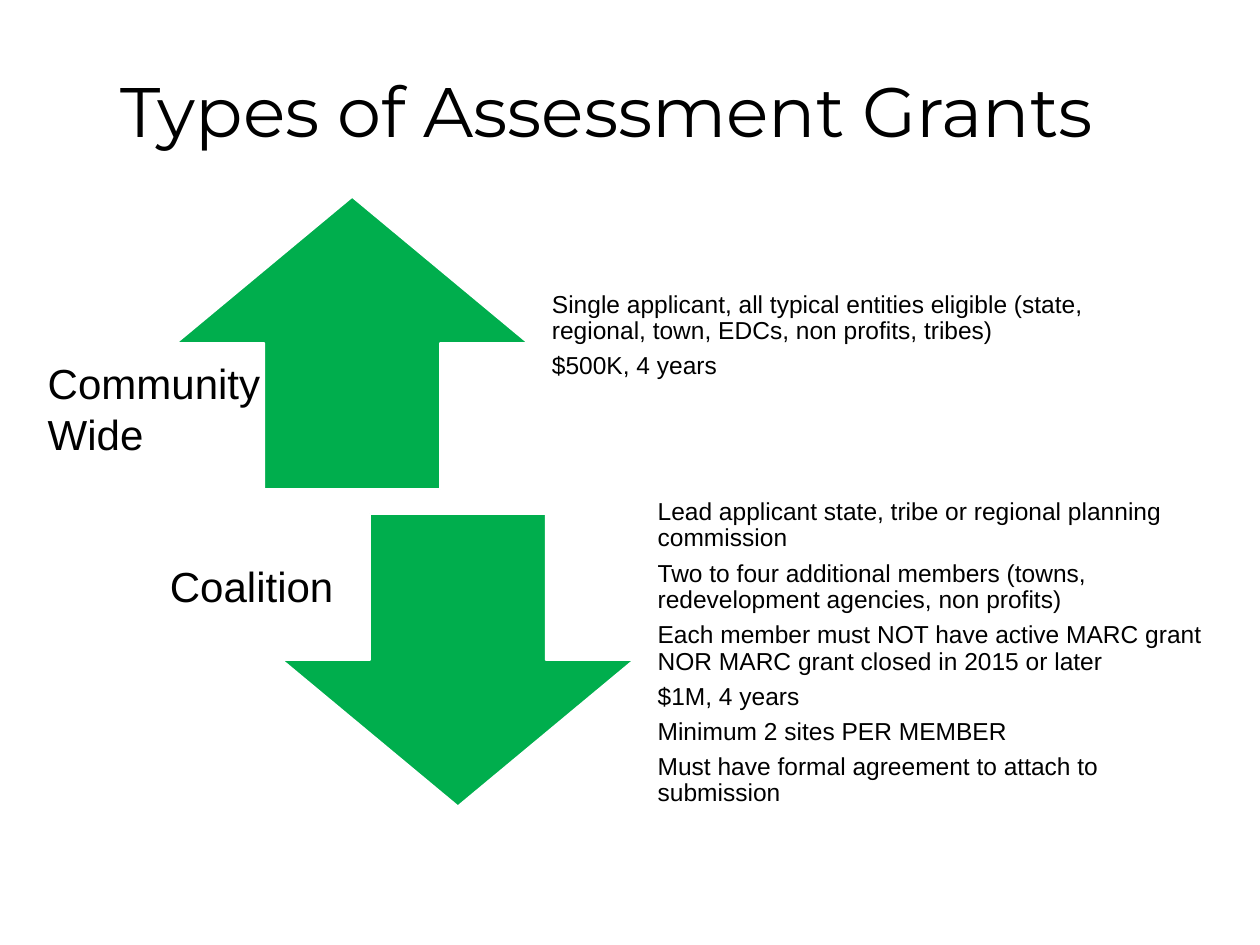
from pptx import Presentation
from pptx.dml.color import RGBColor
from pptx.enum.shapes import MSO_SHAPE as SHAPE
from pptx.enum.text import MSO_ANCHOR as ANCHOR, MSO_AUTO_SIZE as AUTO, PP_ALIGN as ALIGN
from pptx.util import Pt

GREEN = RGBColor(0x00, 0xAE, 0x4D)
WHITE = RGBColor(0xFF, 0xFF, 0xFF)
BLACK = RGBColor(0x00, 0x00, 0x00)


def set_font(p, name, size):
    p.font.name, p.font.size = name, Pt(size)
    p.font.color.rgb = BLACK


prs = Presentation()
prs.slide_width, prs.slide_height = Pt(720), Pt(540)
s = prs.slides.add_slide(prs.slide_layouts[5])

# Title
title = s.shapes.title
title.left, title.top, title.width, title.height = Pt(10.8), Pt(13.7), Pt(671.8), Pt(104.4)
tf = title.text_frame
tf.text = "Types of Assessment Grants"
tf.vertical_anchor = ANCHOR.MIDDLE
p = tf.paragraphs[0]
p.alignment, p.line_spacing = ALIGN.CENTER, 0.9
set_font(p, "Montserrat", 40)

# Arrows with the details of each grant type
grants = [
    (SHAPE.UP_ARROW, 100.8, 112.5, [
        "Single applicant, all typical entities eligible (state, regional, town, "
        "EDCs, non profits, tribes)",
        "$500K, 4 years",
    ]),
    (SHAPE.DOWN_ARROW, 161.2, 293.7, [
        "Lead applicant state, tribe or regional planning commission",
        "Two to four additional members (towns, redevelopment agencies, non profits)",
        "Each member must NOT have active MARC grant NOR MARC grant closed in 2015 or later",
        "$1M, 4 years",
        "Minimum 2 sites PER MEMBER",
        "Must have formal agreement to attach to submission",
    ]),
]
details_format = {
    "word_wrap": True, "vertical_anchor": ANCHOR.MIDDLE,
    "margin_left": Pt(7.9), "margin_top": 0,
    "margin_right": Pt(7.9), "margin_bottom": Pt(7.9),
}
group = s.shapes.add_group_shape()
for kind, left, top, details in grants:
    arrow = group.shapes.add_shape(kind, Pt(left), Pt(top), Pt(200.9), Pt(167))
    arrow.shadow.inherit = False
    arrow.fill.solid()
    arrow.fill.fore_color.rgb = GREEN
    arrow.line.color.rgb = WHITE
    arrow.line.width = Pt(1)

    box = group.shapes.add_textbox(Pt(left + 206.7), Pt(top), Pt(341.3), Pt(167))
    tf = box.text_frame
    for name, value in details_format.items():
        setattr(tf, name, value)
    for i, text in enumerate(details):
        p = tf.add_paragraph() if i else tf.paragraphs[0]
        p.text = text
        p.line_spacing, p.space_after = 0.9, Pt(4.9)
        set_font(p, "Arial", 14)

# Names of the grant types
labels = [
    ("Community Wide", 20.2, 200.9, 139, 65.4, True),
    ("Coalition", 90, 316.8, 108.7, 36, False),
]
for text, left, top, width, height, wrap in labels:
    box = s.shapes.add_textbox(Pt(left), Pt(top), Pt(width), Pt(height))
    tf = box.text_frame
    tf.text = text
    tf.word_wrap = wrap
    tf.auto_size = AUTO.SHAPE_TO_FIT_TEXT
    set_font(tf.paragraphs[0], "Arial", 24)

prs.save("out.pptx")
